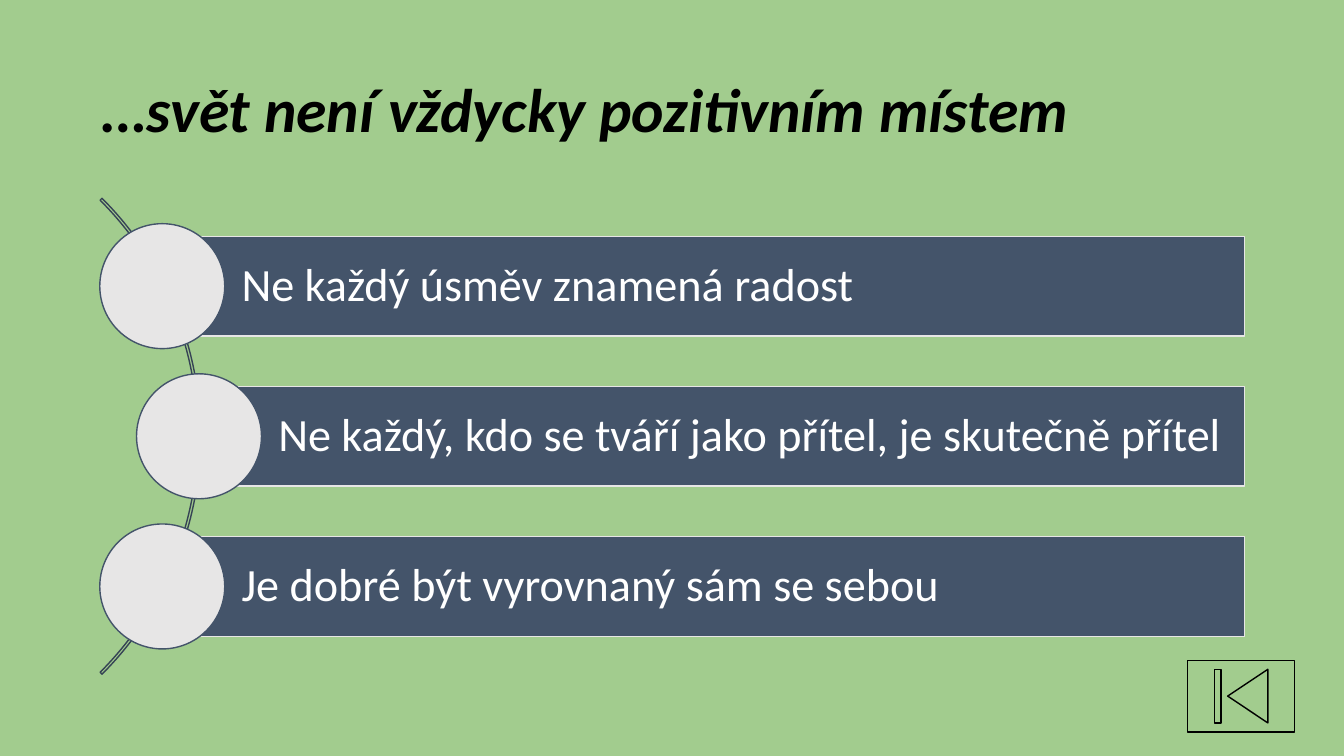
from pptx import Presentation
from pptx.dml.color import RGBColor
from pptx.enum.shapes import MSO_SHAPE
from pptx.enum.text import MSO_ANCHOR, PP_ALIGN
from pptx.util import Pt

PX = 9525
GREEN = RGBColor(0xA2, 0xCC, 0x8E)
SLATE = RGBColor(0x44, 0x54, 0x6A)
DARK = RGBColor(0x36, 0x43, 0x55)
PALE = RGBColor(0xE7, 0xE6, 0xE6)
WHITE = RGBColor(0xFF, 0xFF, 0xFF)
BLACK = RGBColor(0, 0, 0)

TITLE = "…svět není vždycky pozitivním místem"
ITEMS = [
    ("Ne každý úsměv znamená radost", 154),
    ("Ne každý, kdo se tváří jako přítel, je skutečně přítel", 189),
    ("Je dobré být vyrovnaný sám se sebou", 154),
]
TOP, STEP, RIGHT = 225, 143, 1185
TALL, DISC = 95, 119


def write(shape, text, size, color, pad=(10, 5, 10, 5), bold=False, slant=False):
    frame = shape.text_frame
    frame.word_wrap = True
    frame.vertical_anchor = MSO_ANCHOR.MIDDLE
    left, top, right, base = (side * PX for side in pad)
    frame.margin_left, frame.margin_top = left, top
    frame.margin_right, frame.margin_bottom = right, base
    para = frame.paragraphs[0]
    para.alignment = PP_ALIGN.LEFT
    para.line_spacing = 0.9
    run = para.add_run()
    run.text = text
    font = run.font
    font.name, font.size = "Calibri", Pt(size)
    font.bold, font.italic = bold, slant
    font.color.rgb = color


def draw(slide, kind, box, line, fill=None):
    shape = slide.shapes.add_shape(kind, *(side * PX for side in box))
    shape.shadow.inherit = False
    shape.line.color.rgb = line
    shape.line.width = Pt(1)
    if fill is None:
        shape.fill.background()
    else:
        shape.fill.solid()
        shape.fill.fore_color.rgb = fill
    return shape


def add_arc(slide):
    arc = draw(slide, MSO_SHAPE.BLOCK_ARC, (-450, 95, 641, 641), DARK)
    for spot, value in enumerate((189, 27, 0.004)):
        arc.adjustments[spot] = value


def add_item(slide, text, left, top):
    bar = draw(slide, MSO_SHAPE.RECTANGLE, (left, top, RIGHT - left, TALL), PALE, SLATE)
    write(bar, text, 33, WHITE, pad=(76, 9, 9, 9))
    rise = (DISC - TALL) // 2
    draw(slide, MSO_SHAPE.OVAL, (left - DISC // 2, top - rise, DISC, DISC), SLATE, PALE)


def add_title(slide):
    title = slide.shapes.title
    title.left, title.top, title.width, title.height = (
        side * PX for side in (88, 38, 1104, 139))
    write(title, TITLE, 44, BLACK, bold=True, slant=True)


def main():
    deck = Presentation()
    deck.slide_width, deck.slide_height = 1280 * PX, 720 * PX
    slide = deck.slides.add_slide(deck.slide_layouts[5])
    slide.background.fill.solid()
    slide.background.fill.fore_color.rgb = GREEN
    add_title(slide)
    add_arc(slide)
    for row, (text, left) in enumerate(ITEMS):
        add_item(slide, text, left, TOP + row * STEP)
    draw(slide, MSO_SHAPE.ACTION_BUTTON_BEGINNING, (1131, 629, 102, 68), BLACK)
    deck.save("out.pptx")


if __name__ == "__main__":
    main()
